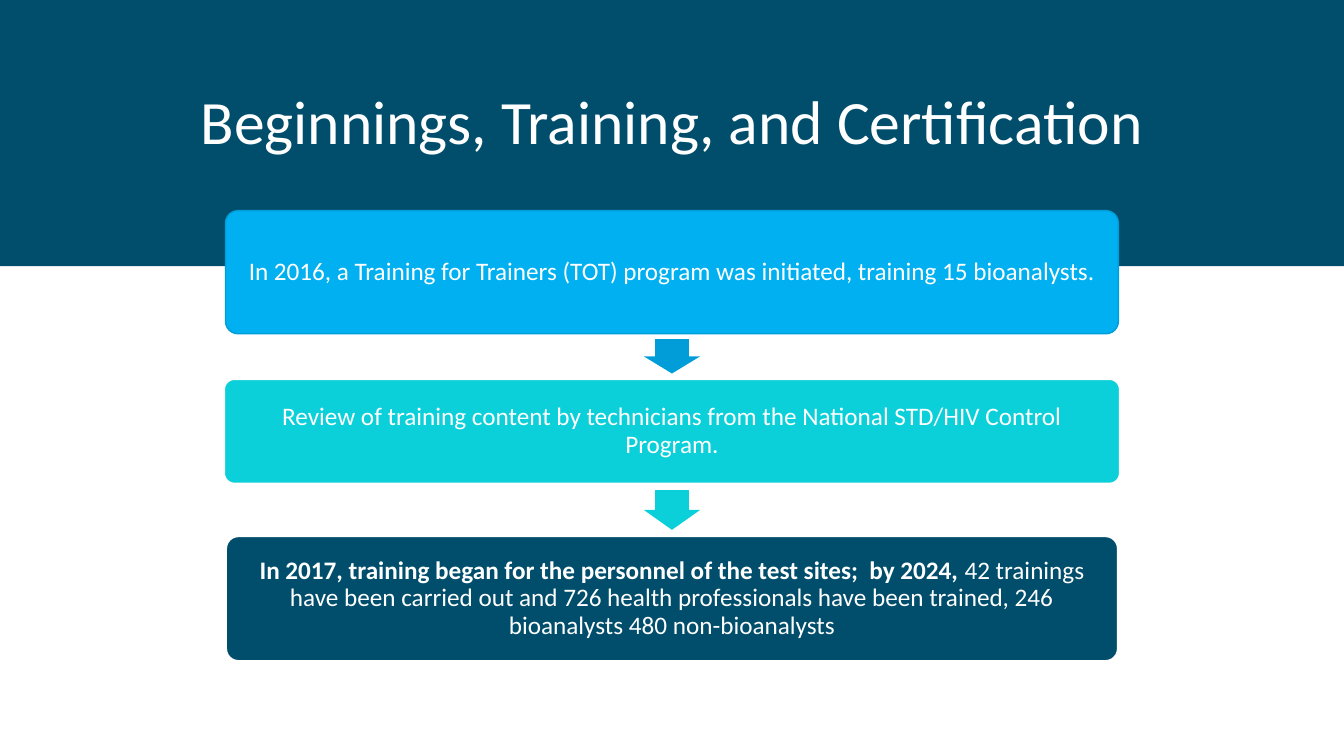
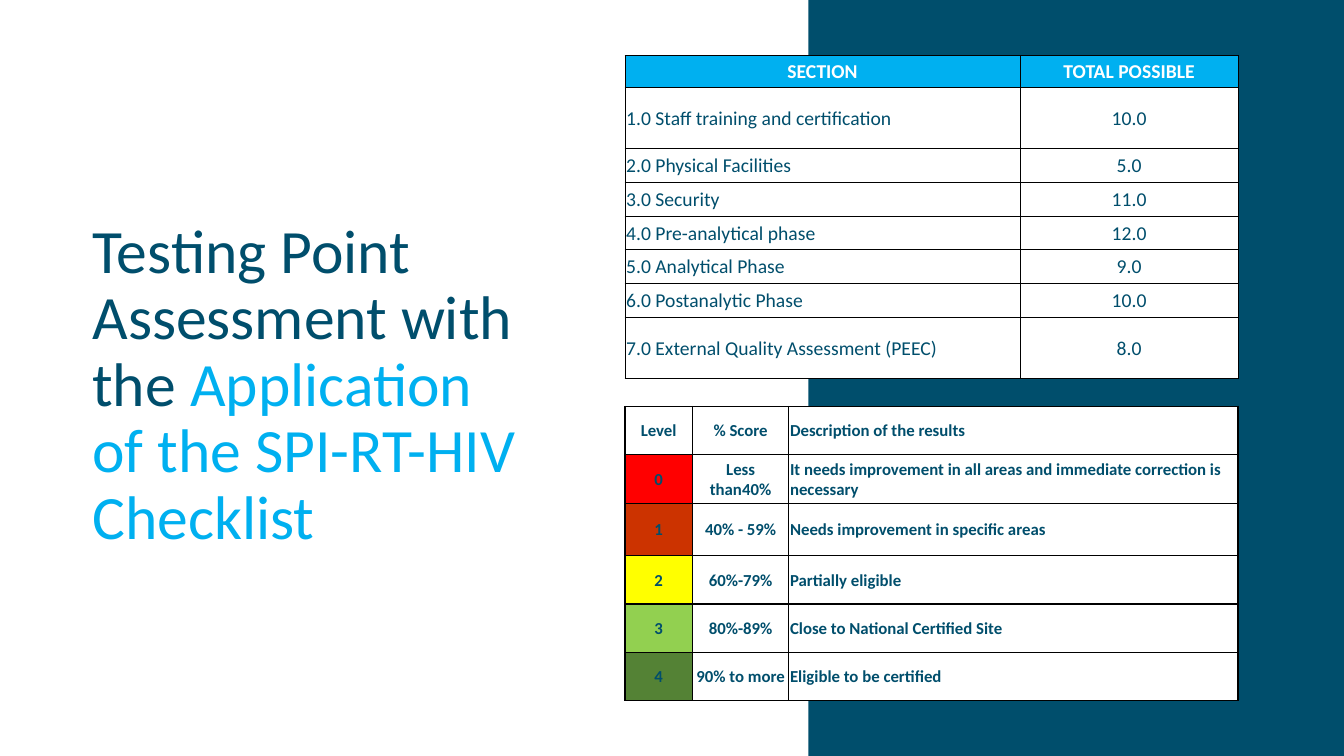
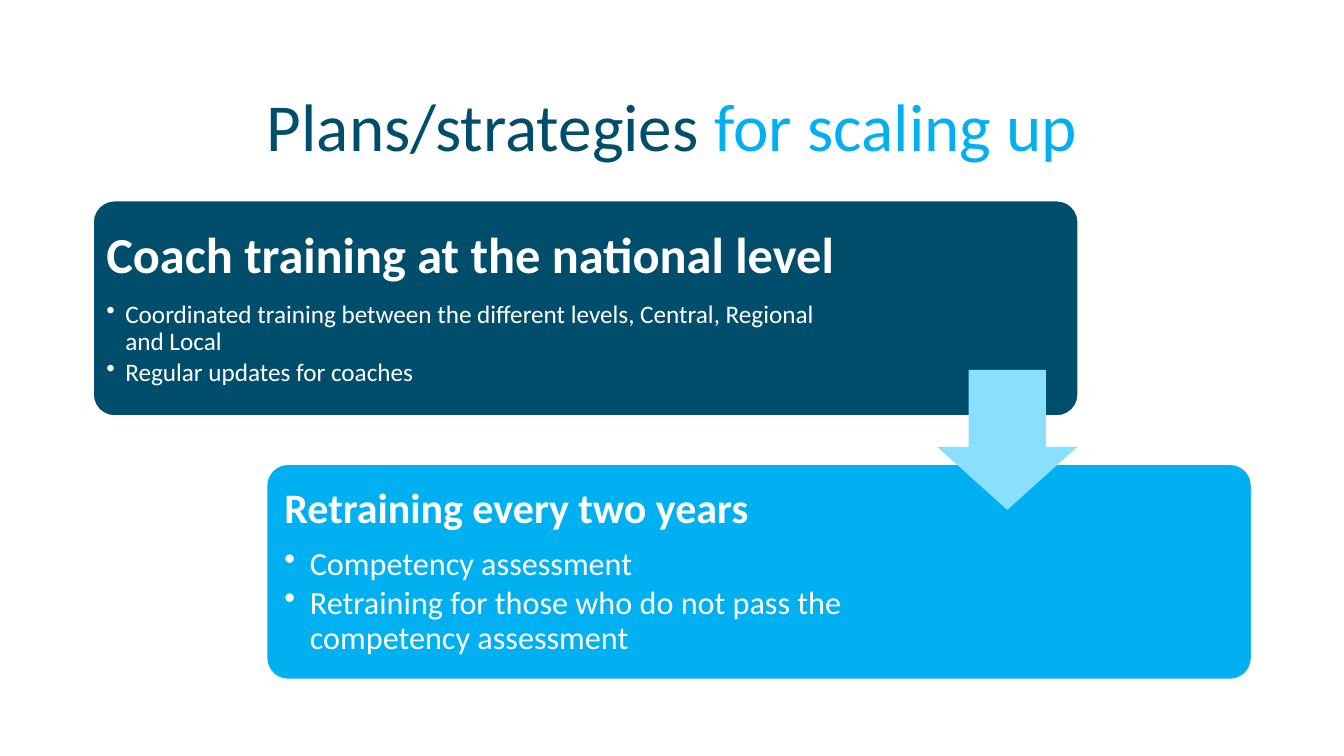
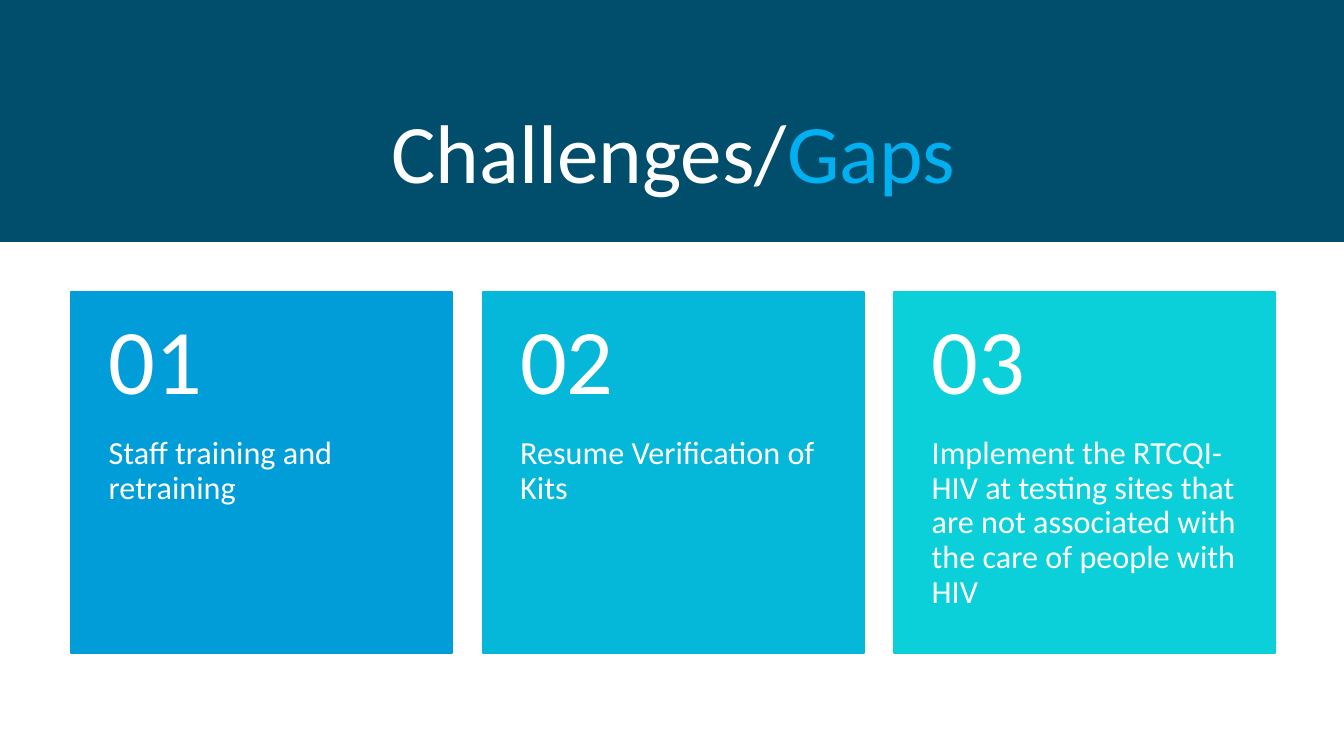
from dataclasses import dataclass

from lxml import etree
from pptx import Presentation
from pptx import util as u
from pptx.dml.color import RGBColor
from pptx.enum import shapes, text
from pptx.oxml import ns


@dataclass(frozen=True)
class Theme:
    font: str = "Calibri"
    navy: str = "004E6C"
    sky: str = "00B0F0"
    blue: str = "009DD9"
    cyan: str = "05B7D9"
    aqua: str = "0BD0D9"
    pale: str = "8ADFFF"
    white: str = "FFFFFF"
    black: str = "000000"
    levels: tuple = ("FF0000", "CC3300", "FFFF00", "92D050", "548235")
    title: float = 44
    title_large: float = 48
    title_huge: float = 59.4
    number: float = 66
    card: float = 23
    step: float = 18
    section_cell: float = 14
    level_cell: float = 12
    line_spacing: float = 0.9


THEME = Theme()
SLIDE_W, SLIDE_H = 33.87, 19.05
LEFT, CENTER = text.PP_ALIGN.LEFT, text.PP_ALIGN.CENTER
TOP, MIDDLE = text.MSO_ANCHOR.TOP, text.MSO_ANCHOR.MIDDLE
SHAPE = shapes.MSO_SHAPE

SECTIONS = [
    ("SECTION", "TOTAL POSSIBLE"),
    ("1.0 Staff training and certification", "10.0"),
    ("2.0 Physical Facilities", "5.0"),
    ("3.0 Security", "11.0"),
    ("4.0 Pre-analytical phase", "12.0"),
    ("5.0 Analytical Phase", "9.0"),
    ("6.0 Postanalytic Phase", "10.0"),
    ("7.0 External Quality Assessment (PEEC)", "8.0"),
]
LEVELS = [
    ("Level", "% Score", "Description of the results"),
    ("0", "Less than40%",
     "It needs improvement in all areas and immediate correction is necessary"),
    ("1", "40% - 59%", "Needs improvement in specific areas"),
    ("2", "60%-79%", "Partially eligible"),
    ("3", "80%-89%", "Close to National Certified Site"),
    ("4", "90% to more", "Eligible to be certified"),
]


def rgb(color):
    return RGBColor.from_string(color)


def box(left, top, width, height):
    return [u.Cm(value) for value in (left, top, width, height)]


def write(paragraph, runs, size, align=LEFT, spacing=THEME.line_spacing):
    """Fill a paragraph with runs given as (words, colour, bold)."""
    paragraph.alignment = align
    paragraph.line_spacing = spacing
    for words, color, bold in runs:
        run = paragraph.add_run()
        run.text = words
        run.font.name = THEME.font
        run.font.size = u.Pt(size)
        run.font.bold = bold
        run.font.color.rgb = rgb(color)


def set_frame(frame, anchor, margins=None):
    """Margins are left, top, right and bottom in centimetres."""
    frame.word_wrap = True
    frame.vertical_anchor = anchor
    if margins:
        (frame.margin_left, frame.margin_top,
         frame.margin_right, frame.margin_bottom) = box(*margins)


def add_block(slide, kind, area, fill, line=None, line_width=1.5):
    block = slide.shapes.add_shape(kind, *box(*area))
    block.shadow.inherit = False
    block.fill.solid()
    block.fill.fore_color.rgb = rgb(fill)
    if line:
        block.line.color.rgb = rgb(line)
        block.line.width = u.Pt(line_width)
    else:
        block.line.fill.background()
    return block


def add_panel(slide, area, fill, line, line_width=1.5):
    panel = add_block(slide, SHAPE.ROUNDED_RECTANGLE, area, fill, line, line_width)
    panel.adjustments[0] = 0.1
    return panel


def add_arrow(slide, area, fill, shaft, head):
    arrow = add_block(slide, SHAPE.DOWN_ARROW, area, fill)
    arrow.adjustments[0], arrow.adjustments[1] = shaft, head


def add_band(slide, left=0, height=SLIDE_H):
    """Navy background band that reaches the right edge of the slide."""
    add_block(slide, SHAPE.RECTANGLE, (left, 0, SLIDE_W - left, height), THEME.navy)


def add_label(slide, area, runs, size, align=LEFT, margins=None):
    frame = slide.shapes.add_textbox(*box(*area)).text_frame
    set_frame(frame, MIDDLE, margins)
    write(frame.paragraphs[0], runs, size, align)


def add_title(slide, area, lead, lead_color, accent="", size=THEME.title, align=CENTER):
    runs = [(lead, lead_color, False)]
    if accent:
        runs.append((accent, THEME.sky, False))
    add_label(slide, area, runs, size, align)


def add_bullet(paragraph, indent):
    properties = paragraph._p.get_or_add_pPr()
    properties.set("marL", str(u.Cm(indent)))
    properties.set("indent", str(-u.Cm(indent)))
    etree.SubElement(properties, ns.qn("a:buChar"), char="•")


def add_borders(cell, width):
    properties = cell._tc.get_or_add_tcPr()
    for side in ("lnL", "lnR", "lnT", "lnB"):
        line = etree.SubElement(properties, ns.qn("a:" + side), w=str(u.Pt(width)))
        fill = etree.SubElement(line, ns.qn("a:solidFill"))
        etree.SubElement(fill, ns.qn("a:srgbClr"), val=THEME.black)


def add_grid(slide, left, top, widths, heights, rows, size, border, cell_style):
    """cell_style(row, column) gives fill, text colour, bold and alignment."""
    area = box(left, top, sum(widths), sum(heights))
    grid = slide.shapes.add_table(len(rows), len(widths), *area).table
    grid.first_row = grid.horz_banding = False
    for column, width in zip(grid.columns, widths):
        column.width = u.Cm(width)
    for row, height in zip(grid.rows, heights):
        row.height = u.Cm(height)
    for r, entries in enumerate(rows):
        for c, words in enumerate(entries):
            fill, color, bold, align = cell_style(r, c)
            cell = grid.cell(r, c)
            cell.vertical_anchor = MIDDLE
            cell.margin_left = cell.margin_right = cell.margin_top = u.Cm(0.03)
            cell.margin_bottom = 0
            add_borders(cell, border)
            cell.fill.solid()
            cell.fill.fore_color.rgb = rgb(fill)
            write(cell.text_frame.paragraphs[0], [(words, color, bold)], size, align, 1)


def section_style(row, column):
    if row == 0:
        return THEME.sky, THEME.white, True, CENTER
    return THEME.white, THEME.navy, False, CENTER if column else LEFT


def level_style(row, column):
    fill = THEME.levels[row - 1] if row and column == 0 else THEME.white
    return fill, THEME.navy, True, LEFT if column == 2 else CENTER


def build_training(slide):
    add_band(slide, height=6.71)
    add_title(slide, (2.34, 1.3, 29.21, 3.68),
              "Beginnings, Training, and Certification", THEME.white)
    # top, width, height, fill, outline, outline width, runs
    steps = [
        (5.31, 22.5, 3.1, THEME.sky, THEME.blue, 1,
         [("In 2016, a Training for Trainers (TOT) program was initiated, "
           "training 15 bioanalysts.", THEME.white, False)]),
        (9.55, 22.58, 2.64, THEME.aqua, THEME.white, 1.5,
         [("Review of training content by technicians from the National "
           "STD/HIV Control Program.", THEME.white, False)]),
        (13.51, 22.48, 3.15, THEME.navy, THEME.white, 1.5,
         [("In 2017, training began for the personnel of the test sites;  by 2024, ",
           THEME.white, True),
          ("42 trainings have been carried out and 726 health professionals "
           "have been trained, 246 bioanalysts 480 non-bioanalysts",
           THEME.white, False)]),
    ]
    for top, width, height, fill, line, line_width, runs in steps:
        area = ((SLIDE_W - width) / 2, top, width, height)
        frame = add_panel(slide, area, fill, line, line_width).text_frame
        set_frame(frame, MIDDLE, (0.18,) * 4)
        write(frame.paragraphs[0], runs, THEME.step, CENTER)

    arrow_width = 1.42
    for upper, lower, fill in zip(steps, steps[1:], (THEME.blue, THEME.aqua)):
        bottom = upper[0] + upper[2]
        gap = lower[0] - bottom
        height = 0.76 * gap
        area = ((SLIDE_W - arrow_width) / 2, bottom + (gap - height) / 2,
                arrow_width, height)
        add_arrow(slide, area, fill, 0.6, 0.5)


def build_assessment(slide):
    add_band(slide, left=20.37)
    add_title(slide, (2.08, 3.78, 11.61, 11.91), "Testing Point Assessment with the ",
              THEME.navy, "Application of the SPI-RT-HIV Checklist", align=LEFT)
    tables_left = 15.75
    add_grid(slide, tables_left, 10.24, (1.7, 2.43, 11.32),
             (1.22, 1.22, 1.32, 1.22, 1.22, 1.22),
             LEVELS, THEME.level_cell, 1, level_style)
    add_grid(slide, tables_left, 1.4, (9.96, 5.49), (0.79, 1.55, *[0.85] * 5, 1.55),
             SECTIONS, THEME.section_cell, 0.5, section_style)


def build_plans(slide):
    add_title(slide, (3.91, 1.91, 26.06, 2.72), "Plans/strategies ", THEME.navy,
              "for scaling up", THEME.title_large)
    # fill, margin, right margin, heading size, bullet size, indent, heading, bullets
    plans = [
        (THEME.navy, 0.18, 5.5, 36, 18, 0.48, "Coach training at the national level",
         ["Coordinated training between the different levels, "
          "Central, Regional and Local",
          "Regular updates for coaches"]),
        (THEME.sky, 0.3, 8.25, 30, 23, 0.64, "Retraining every two years",
         ["Competency assessment",
          "Retraining for those who do not pass the competency assessment"]),
    ]
    for i, plan in enumerate(plans):
        fill, margin, right, heading_size, bullet_size, indent, heading, bullets = plan
        area = (2.34 + 4.37 * i, 5.05 + 6.64 * i, 24.84, 5.44)
        frame = add_panel(slide, area, fill, THEME.white).text_frame
        set_frame(frame, MIDDLE, (margin, margin, right, margin))
        first = frame.paragraphs[0]
        write(first, [(heading, THEME.white, True)], heading_size)
        first.space_after = u.Pt(round(0.35 * heading_size, 1))
        for words in bullets:
            item = frame.add_paragraph()
            write(item, [(words, THEME.white, False)], bullet_size)
            item.space_after = u.Pt(round(0.15 * bullet_size, 1))
            add_bullet(item, indent)
    add_arrow(slide, (23.62, 9.32, 3.53, 3.53), THEME.pale, 0.55, 0.45)


def build_challenges(slide):
    add_band(slide, height=6.1)
    add_title(slide, (3.94, 2.59, 26.06, 2.72), "Challenges/", THEME.white,
              "Gaps", THEME.title_huge)
    challenges = [
        (THEME.blue, "Staff training and retraining"),
        (THEME.cyan, "Resume Verification of Kits"),
        (THEME.aqua, "Implement the RTCQI-HIV at testing sites that are not "
                     "associated with the care of people with HIV"),
    ]
    top, width, height, number_height, side = 7.37, 9.6, 9.09, 3.63, 0.94
    for i, (fill, words) in enumerate(challenges):
        left = 1.8 + 10.37 * i
        card = add_block(slide, SHAPE.RECTANGLE, (left, top, width, height), fill, fill)
        set_frame(card.text_frame, TOP, (side, number_height, side, 0.91))
        write(card.text_frame.paragraphs[0], [(words, THEME.white, False)], THEME.card)
        add_label(slide, (left, top, width, number_height),
                  [(f"{i + 1:02}", THEME.white, False)], THEME.number,
                  margins=(side, 0.46, side, 0.46))


def main():
    deck = Presentation()
    deck.slide_width, deck.slide_height = u.Cm(SLIDE_W), u.Cm(SLIDE_H)
    blank = deck.slide_layouts[6]
    for build in (build_training, build_assessment, build_plans, build_challenges):
        build(deck.slides.add_slide(blank))
    deck.save("out.pptx")


if __name__ == "__main__":
    main()
